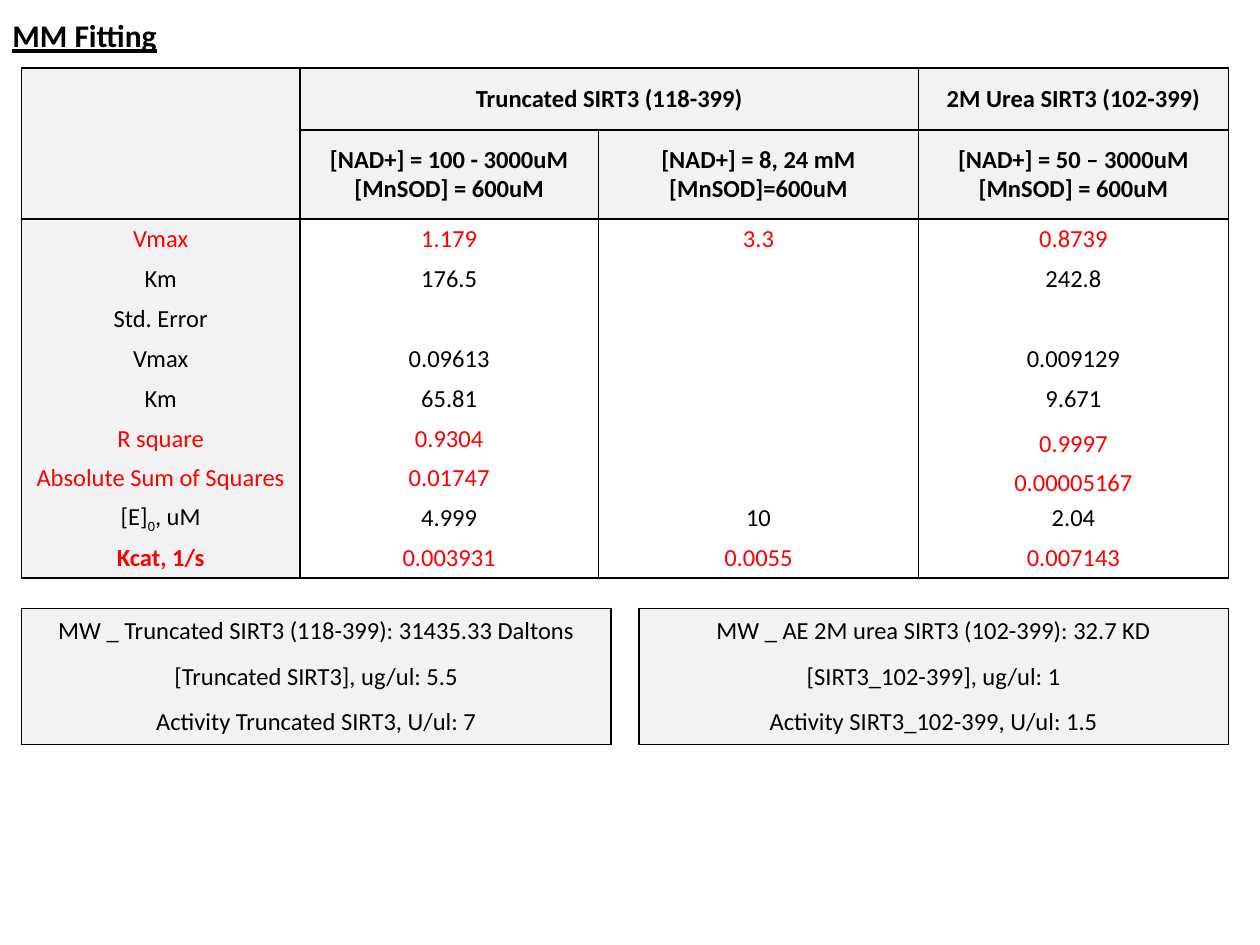
from lxml import etree
from pptx import Presentation
from pptx.dml.color import RGBColor
from pptx.enum.text import MSO_ANCHOR as Anchor, PP_ALIGN as Align
from pptx.oxml.ns import qn
from pptx.util import Inches, Pt

BLACK = RGBColor(0x00, 0x00, 0x00)
RED = RGBColor(0xFF, 0x00, 0x00)
GRAY = RGBColor(0xF2, 0xF2, 0xF2)

HEADER_HEIGHTS = (0.49, 0.71)
FIT_WIDTHS = (2.21, 2.37, 2.54, 2.46)
INFO_WIDTHS = (1.6, 1.11, 0.92, 1.05)
HEADERS = [
    ("", "Truncated SIRT3 (118-399)", "", "2M Urea SIRT3 (102-399)"),
    ("", "[NAD+] = 100 - 3000uM\n[MnSOD] = 600uM",
     "[NAD+] = 8, 24 mM\n[MnSOD]=600uM",
     "[NAD+] = 50 – 3000uM\n[MnSOD] = 600uM"),
]
RESULTS = [
    ("Vmax", "1.179", "3.3", "0.8739"),
    ("Km", "176.5", "", "242.8"),
    ("Std. Error", "", "", ""),
    ("Vmax", "0.09613", "", "0.009129"),
    ("Km", "65.81", "", "9.671"),
    ("R square", "0.9304", "", "0.9997"),
    ("Absolute Sum of Squares", "0.01747", "", "0.00005167"),
    ("[E]~0~, uM", "4.999", "10", "2.04"),
    ("Kcat, 1/s", "0.003931", "0.0055", "0.007143"),
]
RED_RESULTS = (0, 5, 6, 8)
LOW_RESULTS = (5, 6)
INFO_BOXES = [
    (0.17, ["MW _ Truncated SIRT3 (118-399): 31435.33 Daltons",
            "[Truncated SIRT3], ug/ul: 5.5",
            "Activity Truncated SIRT3, U/ul: 7"]),
    (5.07, ["MW _ AE 2M urea SIRT3 (102-399): 32.7 KD",
            "[SIRT3_102-399], ug/ul: 1",
            "Activity SIRT3_102-399, U/ul: 1.5"]),
]


def add_run(paragraph, text, color=BLACK, **values):
    """Add a run in Calibri with the given font values."""
    run = paragraph.add_run()
    run.text = text
    font_values = {"name": "Calibri", "size": Pt(14), "bold": False, **values}
    for name, value in font_values.items():
        setattr(run.font, name, value)
    run.font.color.rgb = color
    return run


def set_borders(cell, sides):
    """Draw black lines on the named sides and none on the others."""
    properties = cell._tc.get_or_add_tcPr()
    for index, side in enumerate("LRTB"):
        line = etree.Element(qn(f"a:ln{side}"), w=str(Pt(1)))
        if side in sides:
            fill = etree.SubElement(line, qn("a:solidFill"))
            etree.SubElement(fill, qn("a:srgbClr"), val=str(BLACK))
        else:
            etree.SubElement(line, qn("a:noFill"))
        properties.insert(index, line)


def fill_cell(cell, text, sides, shaded=True, color=BLACK, bold=False, anchor=Anchor.MIDDLE):
    """Write centred lines in a cell, with ~ marks around a subscript."""
    format_values = {"margin_left": 0, "margin_right": 0, "margin_top": 0,
                     "margin_bottom": 0, "vertical_anchor": anchor}
    for name, value in format_values.items():
        setattr(cell, name, value)
    if shaded:
        cell.fill.solid()
        cell.fill.fore_color.rgb = GRAY
    else:
        cell.fill.background()
    frame = cell.text_frame
    for index, line in enumerate(text.split("\n") if text else []):
        paragraph = frame.add_paragraph() if index else frame.paragraphs[0]
        paragraph.alignment = Align.CENTER
        for part, piece in enumerate(line.split("~")):
            run = add_run(paragraph, piece, color, bold=bold)
            if part % 2:
                run.font._element.set("baseline", "-25000")
    set_borders(cell, sides)


def add_grid(slide, left, top, widths, heights):
    """Add a plain table with the given column widths and row heights."""
    table = slide.shapes.add_table(
        len(heights), len(widths), Inches(left), Inches(top),
        Inches(sum(widths)), Inches(sum(heights))).table
    table.first_row = table.horz_banding = False
    for column, width in zip(table.columns, widths):
        column.width = Inches(width)
    for row, height in zip(table.rows, heights):
        row.height = Inches(height)
    return table


def add_title(slide, left, top, width, height):
    """Place the underlined heading."""
    frame = slide.shapes.add_textbox(
        Inches(left), Inches(top), Inches(width), Inches(height)).text_frame
    frame.word_wrap = False
    add_run(frame.paragraphs[0], "MM Fitting", size=Pt(18), bold=True, underline=True)


def add_fit_table(slide, left, top, height):
    """Place the table of fitted parameters."""
    result_height = (height - sum(HEADER_HEIGHTS)) / len(RESULTS)
    heights = [*HEADER_HEIGHTS, *[result_height] * len(RESULTS)]
    table = add_grid(slide, left, top, FIT_WIDTHS, heights)
    for row, texts in enumerate(HEADERS):
        for column, text in enumerate(texts):
            fill_cell(table.cell(row, column), text, "LRTB", bold=True)
    for index, texts in enumerate(RESULTS):
        last = index == len(RESULTS) - 1
        sides = "LR" + "T" * (index == 0) + "B" * last
        for column, text in enumerate(texts):
            low = column == 3 and index in LOW_RESULTS
            fill_cell(table.cell(index + len(HEADERS), column), text, sides,
                      shaded=column == 0,
                      color=RED if index in RED_RESULTS else BLACK,
                      bold=last and column == 0,
                      anchor=Anchor.BOTTOM if low else Anchor.MIDDLE)
    table.cell(0, 0).merge(table.cell(1, 0))
    table.cell(0, 1).merge(table.cell(0, 2))


def add_info_table(slide, left, top, height, lines):
    """Place a box of enzyme facts, one merged row to a line."""
    heights = [height / len(lines)] * len(lines)
    table = add_grid(slide, left, top, INFO_WIDTHS, heights)
    last_column = len(INFO_WIDTHS) - 1
    for row, line in enumerate(lines):
        sides = "LR" + "T" * (row == 0) + "B" * (row == len(lines) - 1)
        for column in range(len(INFO_WIDTHS)):
            fill_cell(table.cell(row, column), "" if column else line, sides)
        table.cell(row, 0).merge(table.cell(row, last_column))


def main():
    """Build and save the slide."""
    presentation = Presentation()
    presentation.slide_width = Inches(10)
    presentation.slide_height = Inches(7.5)
    slide = presentation.slides.add_slide(presentation.slide_layouts[6])
    add_title(slide, 0, 0.08, 1.37, 0.4)
    add_fit_table(slide, 0.17, 0.54, 4.05)
    for left, lines in INFO_BOXES:
        add_info_table(slide, left, 4.83, 1.08, lines)
    presentation.save("out.pptx")


if __name__ == "__main__":
    main()
